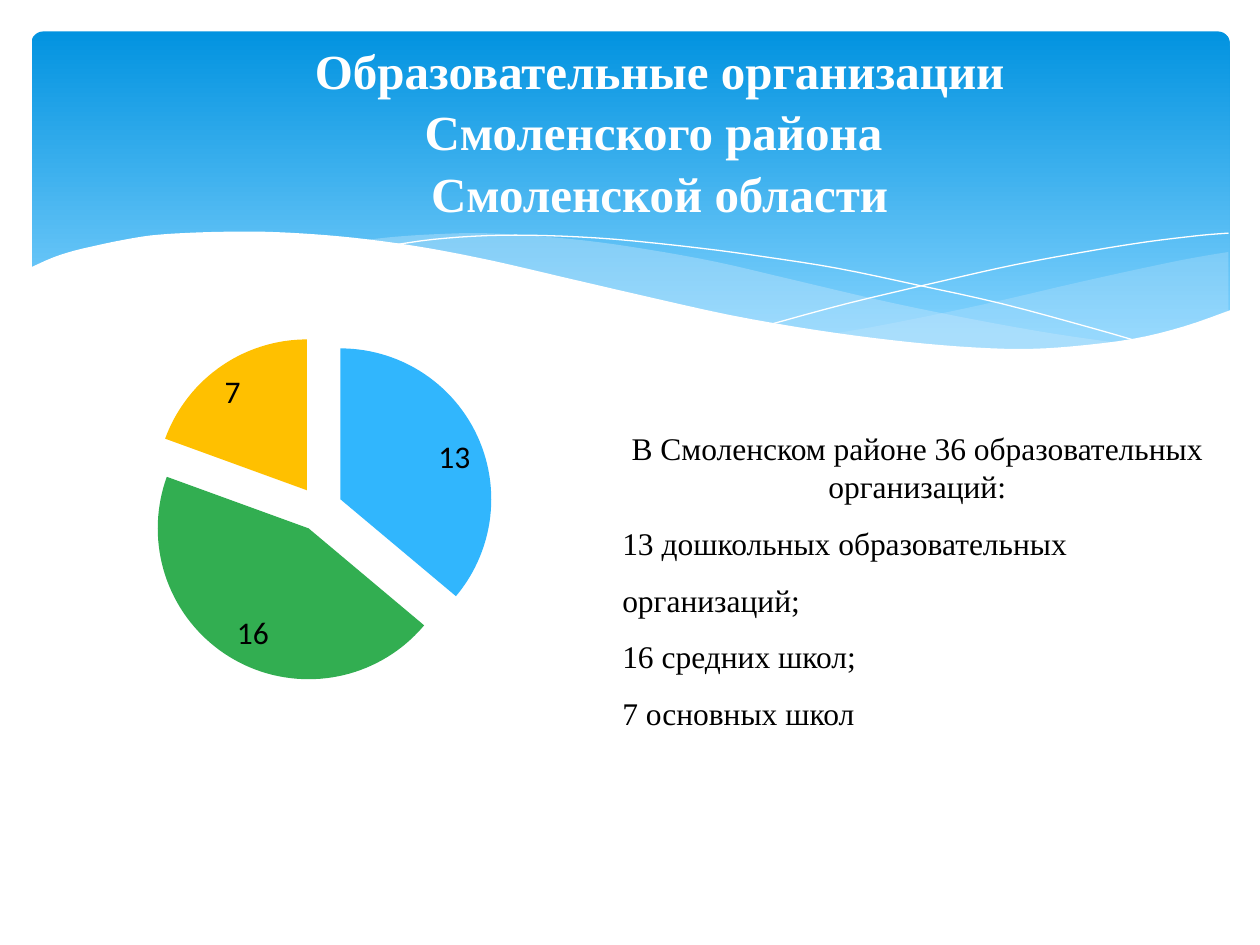
from lxml import etree
from pptx import Presentation
from pptx.chart.data import CategoryChartData
from pptx.dml.color import RGBColor
from pptx.enum.chart import XL_CHART_TYPE, XL_LABEL_POSITION
from pptx.enum.shapes import MSO_SHAPE
from pptx.enum.text import MSO_ANCHOR, PP_ALIGN
from pptx.oxml import parse_xml
from pptx.oxml.ns import nsdecls, qn
from pptx.util import Inches, Pt

PIE = XL_CHART_TYPE.PIE
INSIDE_END = XL_LABEL_POSITION.INSIDE_END
ROUNDED = MSO_SHAPE.ROUNDED_RECTANGLE
MIDDLE, TOP = MSO_ANCHOR.MIDDLE, MSO_ANCHOR.TOP
CENTER, LEFT = PP_ALIGN.CENTER, PP_ALIGN.LEFT

WHITE = RGBColor(0xFF, 0xFF, 0xFF)
BLACK = RGBColor(0x00, 0x00, 0x00)
DEEP_BLUE = RGBColor(0x02, 0x93, 0xE0)
SKY_BLUE = RGBColor(0x83, 0xD3, 0xFE)
PALE_BLUE = RGBColor(0xC6, 0xE7, 0xFC)
SLICE_COLORS = (RGBColor(0x31, 0xB6, 0xFD), RGBColor(0x32, 0xAE, 0x51), RGBColor(0xFF, 0xC0, 0x00))
SERIF, SANS = "Times New Roman", "Calibri"

CELL = Inches(0.01)
BAND = (25, 25, 951, 270)
WAVES = (23, 184, 954, 145)
PIE_BOX = (26, 216, 461, 389)
HEADING = (193, 44, 661, 173)
SUMMARY = (484, 336, 488, 300)

RIGHT_CREST = (
    [(952, 16), (912, 23), (838, 39), (756, 58), (683, 73), (638, 81)],
    [(638, 81), (668, 85), (709, 90), (758, 93), (801, 93), (840, 91),
     (874, 86), (905, 79), (926, 73), (952, 63)],
)
MIDDLE_CREST = (
    [(870, 89), (814, 81), (752, 70), (683, 56), (606, 38), (546, 24), (491, 14),
     (442, 7), (397, 3), (357, 1), (321, 2), (290, 4), (263, 7)],
    [(263, 7), (319, 15), (381, 27), (426, 38), (507, 56), (578, 71), (642, 82),
     (699, 90), (750, 93), (795, 94), (834, 93), (870, 89)],
)
FALLING_LINE = (
    [(286, 11), (321, 6), (364, 3), (410, 3), (466, 6), (533, 13), (585, 20),
     (642, 29), (704, 42), (772, 57), (846, 77), (884, 88)],
)
RISING_LINE = (
    [(590, 73), (649, 57), (725, 39), (783, 26), (843, 15), (887, 8), (928, 3), (952, 1)],
)
FOREGROUND = (
    [(954, 62), (917, 75), (876, 85), (827, 91), (786, 93), (738, 91), (685, 86),
     (625, 78), (556, 66), (480, 49), (424, 36), (368, 23), (317, 13), (269, 6),
     (227, 2), (188, 0), (154, 0), (123, 1), (96, 3), (72, 7), (53, 11), (36, 15),
     (23, 19), (13, 23), (0, 29)],
    [(0, 145), (954, 145)],
)


def place(box):
    """Turn grid cells into slide lengths."""
    return [cells * CELL for cells in box]


def smooth(knots, steps=4):
    """Return points of a Catmull-Rom curve through the knots."""
    padded = [knots[0], *knots, knots[-1]]
    points = [knots[0]]
    for quad in zip(padded, padded[1:], padded[2:], padded[3:]):
        for step in range(1, steps + 1):
            t = step / steps
            points.append(tuple(
                (2 * b + (c - a) * t + (2 * a - 5 * b + 4 * c - d) * t ** 2
                 + (3 * b - a - 3 * c + d) * t ** 3) / 2
                for a, b, c, d in zip(*quad)))
    return points


def add_wave(slide, box, curves, fill=None, opacity=100):
    """Draw a filled wave, or a hairline when no fill is given."""
    left, top = place(box[:2])
    points = [(round(x * CELL), round(y * CELL)) for curve in curves for x, y in smooth(curve)]
    builder = slide.shapes.build_freeform(*points[0])
    builder.add_line_segments(points[1:], close=fill is not None)
    wave = builder.convert_to_shape(left, top)
    wave.shadow.inherit = False
    if fill is None:
        wave.fill.background()
        wave.line.color.rgb = WHITE
        wave.line.width = Pt(0)
        return
    wave.fill.solid()
    wave.fill.fore_color.rgb = fill
    wave.line.fill.background()
    if opacity < 100:
        color = wave.fill._xPr.find(qn("a:solidFill"))[0]
        etree.SubElement(color, qn("a:alpha")).set("val", str(opacity * 1000))


def add_band(slide, box):
    """Draw the rounded gradient band behind the heading."""
    band = slide.shapes.add_shape(ROUNDED, *place(box))
    band.adjustments[0] = 0.034
    band.shadow.inherit = False
    band.line.fill.background()
    band.fill.gradient()
    band.fill.gradient_angle = 270
    for stop, position, color in zip(band.fill.gradient_stops, (0, 0.9), (DEEP_BLUE, SKY_BLUE)):
        stop.position = position
        stop.color.rgb = color


def add_waves(slide, box):
    """Layer the waves along the lower edge of the band."""
    add_wave(slide, box, RIGHT_CREST, PALE_BLUE, 29)
    add_wave(slide, box, MIDDLE_CREST, PALE_BLUE, 40)
    add_wave(slide, box, FALLING_LINE)
    add_wave(slide, box, RISING_LINE)
    add_wave(slide, box, FOREGROUND, WHITE)


def add_schools_pie(slide, box):
    """Chart the number of organisations of each kind."""
    data = CategoryChartData()
    data.categories = ["1", "2", "3"]
    data.add_series("ОО Смоленского района Смоленской области", (13, 16, 7))
    chart = slide.shapes.add_chart(PIE, *place(box), data).chart
    chart.has_title = False
    chart.has_legend = False
    chart.font.size = Pt(18)
    chart.font.name = SANS
    chart.font.color.rgb = BLACK
    pie = chart.plots[0]
    pie.vary_by_categories = True
    pie.has_data_labels = True
    pie.data_labels.show_value = True
    pie.data_labels.show_percentage = False
    pie.data_labels.position = INSIDE_END
    schools = pie.series[0]
    for index, color in enumerate(SLICE_COLORS):
        piece = schools.points[index].format
        piece.fill.solid()
        piece.fill.fore_color.rgb = color
        piece.line.fill.background()
    explosion = parse_xml(f'<c:explosion {nsdecls("c")} val="15"/>')
    schools._element.find(qn("c:tx")).addnext(explosion)
    area = chart._chartSpace.chart.plotArea
    for old_layout in area.findall(qn("c:layout")):
        area.remove(old_layout)
    layout = parse_xml(f'<c:layout {nsdecls("c")}><c:manualLayout/></c:layout>')
    settings = {"layoutTarget": "inner", "xMode": "edge", "yMode": "edge",
                "x": 0.09, "y": 0.129, "w": 0.809, "h": 0.708}
    for name, value in settings.items():
        etree.SubElement(layout[0], qn(f"c:{name}")).set("val", str(value))
    area.insert(0, layout)


def add_run(paragraph, text, size, color, bold=False):
    """Add one run of serif text."""
    run = paragraph.add_run()
    run.text = text
    run.font.name = SERIF
    run.font.size = Pt(size)
    run.font.bold = bold
    run.font.color.rgb = color


def fill_heading(slide, box):
    """Place the title over the band."""
    heading = slide.shapes.title
    heading.left, heading.top, heading.width, heading.height = place(box)
    slide.shapes._spTree.append(heading._element)
    frame = heading.text_frame
    frame.word_wrap = True
    frame.vertical_anchor = MIDDLE
    frame.margin_bottom = Inches(0.6)
    paragraph = frame.paragraphs[0]
    paragraph.alignment = CENTER
    paragraph.line_spacing = 1.05
    add_run(paragraph, "Образовательные организации Смоленского района ", 28, WHITE, True)
    paragraph.add_line_break()
    add_run(paragraph, "Смоленской области", 28, WHITE, True)


def add_summary(slide, box):
    """List the organisations beside the pie."""
    frame = slide.shapes.add_textbox(*place(box)).text_frame
    frame.word_wrap = True
    frame.vertical_anchor = TOP
    lead = frame.paragraphs[0]
    lead.alignment = CENTER
    add_run(lead, "В Смоленском районе 36 образовательных организаций:", 18, BLACK)
    for kind in ("13 дошкольных образовательных организаций;", "16 средних школ;", "7 основных школ"):
        paragraph = frame.add_paragraph()
        paragraph.alignment = LEFT
        paragraph.line_spacing = 1.5
        add_run(paragraph, kind, 18, BLACK)


def main():
    """Build and save the slide."""
    deck = Presentation()
    deck.slide_width, deck.slide_height = Inches(10), Inches(7.5)
    slide = deck.slides.add_slide(deck.slide_layouts[5])
    add_band(slide, BAND)
    add_waves(slide, WAVES)
    add_schools_pie(slide, PIE_BOX)
    fill_heading(slide, HEADING)
    add_summary(slide, SUMMARY)
    deck.save("out.pptx")


if __name__ == "__main__":
    main()
